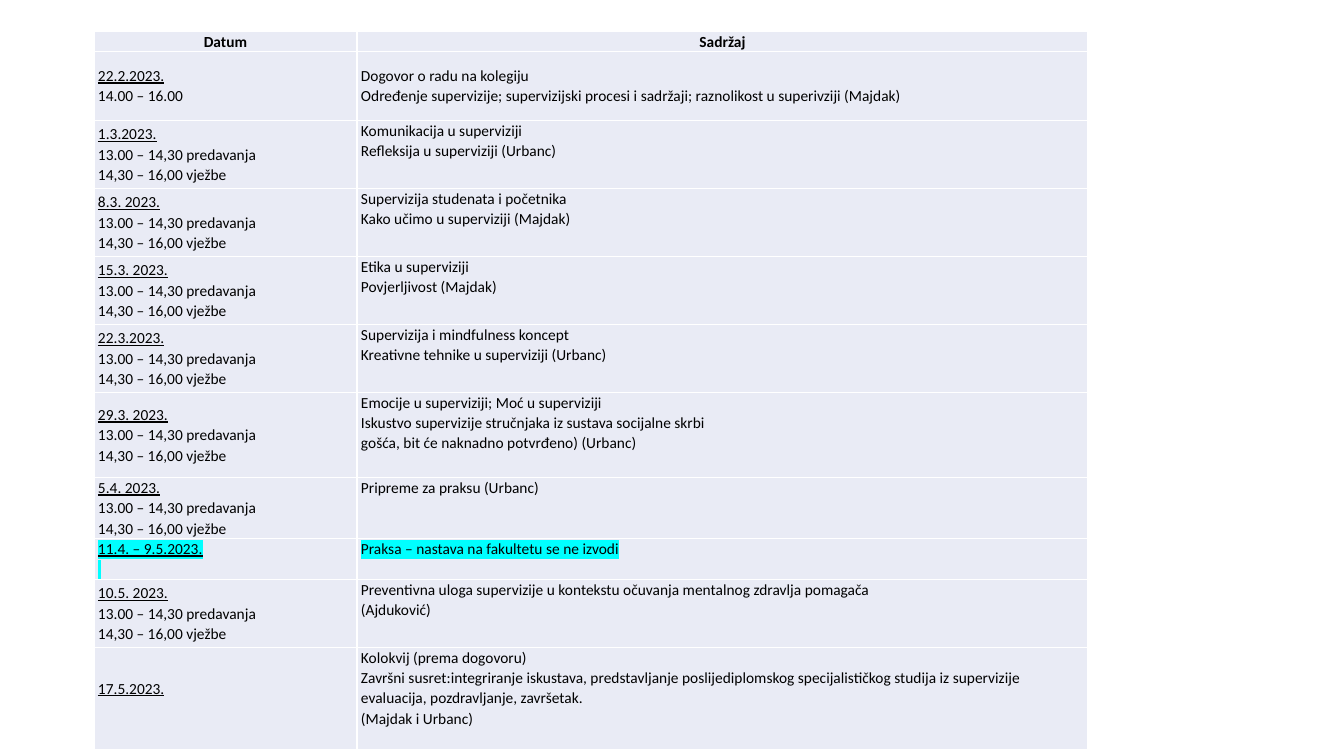
"""Build a one-slide course schedule table of dates and topics."""
from lxml import etree
from pptx import Presentation
from pptx.dml.color import RGBColor
from pptx.enum.text import MSO_ANCHOR, PP_ALIGN
from pptx.oxml.ns import qn
from pptx.util import Pt

MIDDLE, TOP = MSO_ANCHOR.MIDDLE, MSO_ANCHOR.TOP
CENTER, LEFT = PP_ALIGN.CENTER, PP_ALIGN.LEFT
EMU_PER_PX = 914400 / 100.8
THEME = {
    "font": "Calibri",
    "size": Pt(11),
    "spacing": 1.07,
    "text": RGBColor(0, 0, 0),
    "cell": RGBColor(0xE9, 0xEB, 0xF5),
    "highlight": "00FFFF",
}
LINE_HEIGHT = 20
HEADINGS = ["Datum", "Sadržaj"]
COLUMN_WIDTHS = [263, 731]
CLASS_TIMES = ["13.00 – 14,30 predavanja", "14,30 – 16,00 vježbe"]
PRACTICE_DATE = "11.4. – 9.5.2023."
FINAL_DATE = "17.5.2023."

SCHEDULE = [
    (69, "22.2.2023.", ["14.00 – 16.00"], [
        "Dogovor o radu na kolegiju",
        "Određenje supervizije; supervizijski procesi i sadržaji; raznolikost u superivziji (Majdak)"]),
    (68, "1.3.2023.", CLASS_TIMES, [
        "Komunikacija u superviziji", "Refleksija u superviziji (Urbanc)"]),
    (68, "8.3. 2023.", CLASS_TIMES, [
        "Supervizija studenata i početnika", "Kako učimo u superviziji (Majdak)"]),
    (68, "15.3. 2023.", CLASS_TIMES, [
        "Etika u superviziji", "Povjerljivost (Majdak)"]),
    (68, "22.3.2023.", CLASS_TIMES, [
        "Supervizija i mindfulness koncept", "Kreativne tehnike u superviziji (Urbanc)"]),
    (85, "29.3. 2023.", CLASS_TIMES, [
        "Emocije u superviziji; Moć u superviziji",
        "Iskustvo supervizije stručnjaka iz sustava socijalne skrbi",
        "gošća, bit će naknadno potvrđeno) (Urbanc)"]),
    (61, "5.4. 2023.", CLASS_TIMES, ["Pripreme za praksu (Urbanc)"]),
    (41, PRACTICE_DATE, [" "], ["Praksa – nastava na fakultetu se ne izvodi"]),
    (68, "10.5. 2023.", CLASS_TIMES, [
        "Preventivna uloga supervizije u kontekstu očuvanja mentalnog zdravlja pomagača",
        "(Ajduković)"]),
    (102, FINAL_DATE, [], [
        "Kolokvij (prema dogovoru)",
        "Završni susret:integriranje iskustava, predstavljanje poslijediplomskog "
        "specijalističkog studija iz supervizije",
        "evaluacija, pozdravljanje, završetak.",
        "(Majdak i Urbanc)"]),
]


def px(length):
    return round(length * EMU_PER_PX)


def fill_cell(cell, lines, anchor, heading=False, dated=False, highlighted=False):
    cell.fill.solid()
    cell.fill.fore_color.rgb = THEME["cell"]
    cell.vertical_anchor = anchor
    cell.margin_left = cell.margin_right = px(4)
    cell.margin_top = cell.margin_bottom = 0
    for index, line in enumerate(lines):
        frame = cell.text_frame
        para = frame.add_paragraph() if index else frame.paragraphs[0]
        para.alignment = CENTER if heading else LEFT
        para.line_spacing = THEME["spacing"]
        para.font.name = THEME["font"]
        para.font.size = THEME["size"]
        para.font.color.rgb = THEME["text"]
        para.font.bold = heading
        para.font.underline = dated and index == 0
        span = para.add_run()
        span.text = line
        if highlighted:
            highlight = etree.SubElement(span._r.get_or_add_rPr(), qn("a:highlight"))
            etree.SubElement(highlight, qn("a:srgbClr"), val=THEME["highlight"])


deck = Presentation()
deck.slide_width, deck.slide_height = px(1344), px(756)
page = deck.slides.add_slide(deck.slide_layouts[6])

row_heights = [LINE_HEIGHT] + [entry[0] for entry in SCHEDULE]
table = page.shapes.add_table(
    len(row_heights), len(COLUMN_WIDTHS), px(94), px(31),
    px(sum(COLUMN_WIDTHS)), px(sum(row_heights))).table
table.first_row = False
table.horz_banding = False
for column, width in zip(table.columns, COLUMN_WIDTHS):
    column.width = px(width)
for row, height in zip(table.rows, row_heights):
    row.height = px(height)

for column_index, heading in enumerate(HEADINGS):
    fill_cell(table.cell(0, column_index), [heading], MIDDLE, heading=True)

for row_index, (_, date, times, topics) in enumerate(SCHEDULE, start=1):
    date_cell, topic_cell = table.cell(row_index, 0), table.cell(row_index, 1)
    is_practice = date == PRACTICE_DATE
    fill_cell(date_cell, [date, *times], MIDDLE, dated=True, highlighted=is_practice)
    fill_cell(topic_cell, topics, MIDDLE if row_index == 1 else TOP, highlighted=is_practice)
    if date == FINAL_DATE:
        date_cell.margin_bottom = px(LINE_HEIGHT)

deck.save("out.pptx")
